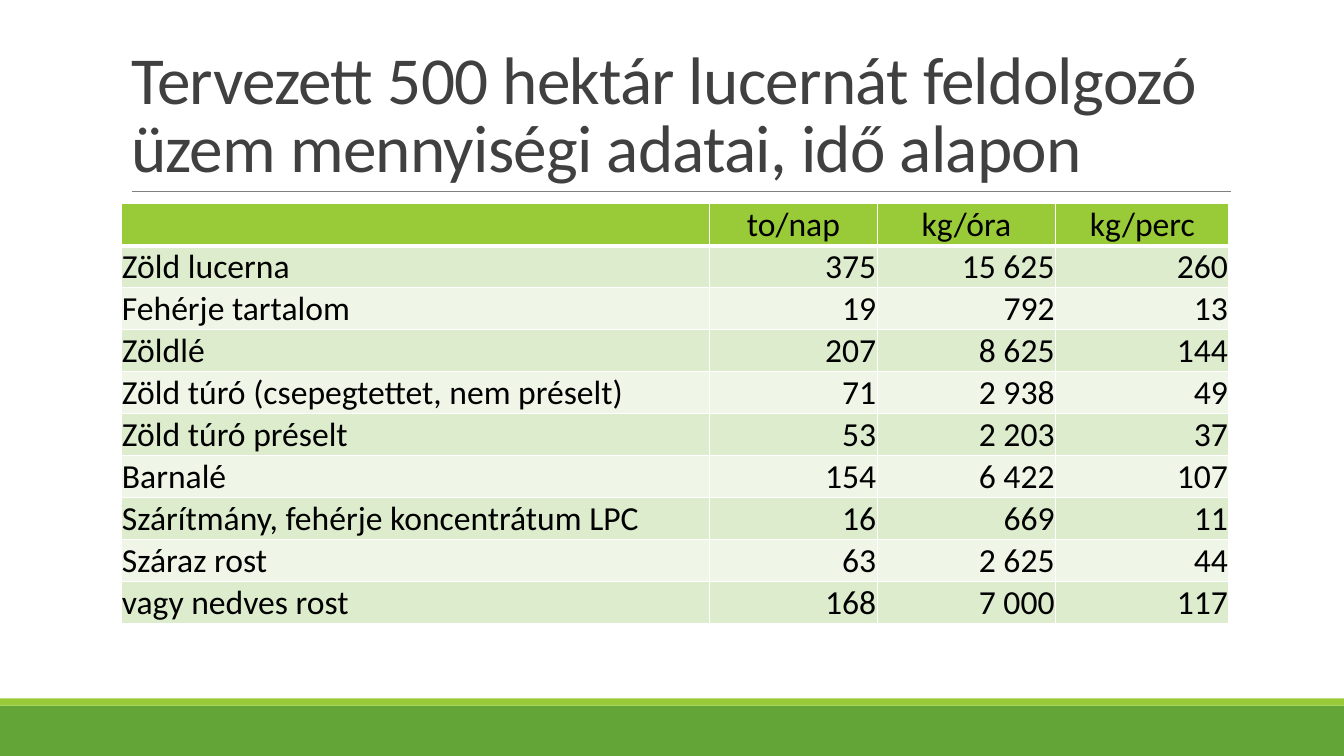
from lxml import etree
from pptx import Presentation
from pptx.dml.color import RGBColor
from pptx.enum.shapes import MSO_CONNECTOR, MSO_SHAPE
from pptx.enum.text import MSO_ANCHOR, MSO_AUTO_SIZE, PP_ALIGN
from pptx.oxml.ns import qn
from pptx.util import Inches, Pt

LEFT, CENTER, RIGHT = PP_ALIGN.LEFT, PP_ALIGN.CENTER, PP_ALIGN.RIGHT
BOTTOM = MSO_ANCHOR.BOTTOM

# Content
TITLE = "Tervezett 500 hektár lucernát feldolgozó üzem mennyiségi adatai, idő alapon"
ROWS = [
    ("", "to/nap", "kg/óra", "kg/perc"),
    ("Zöld lucerna", "375", "15 625", "260"),
    ("Fehérje tartalom", "19", "792", "13"),
    ("Zöldlé", "207", "8 625", "144"),
    ("Zöld túró (csepegtettet, nem préselt)", "71", "2 938", "49"),
    ("Zöld túró préselt", "53", "2 203", "37"),
    ("Barnalé", "154", "6 422", "107"),
    ("Szárítmány, fehérje koncentrátum LPC", "16", "669", "11"),
    ("Száraz rost", "63", "2 625", "44"),
    ("vagy nedves rost", "168", "7 000", "117"),
]

THEME = {
    "font": "Calibri", "title_size": 48, "table_size": 24,
    "title": "404040", "text": "000000", "rule": "808080", "border": "FFFFFF",
    "band": "63A537", "accent": "99CB38", "odd_row": "DEECCE", "even_row": "EFF6E8",
}

# Layout in inches
SLIDE_W, SLIDE_H = 13.33, 7.5
TITLE_BOX = (1.2, 0.31, 11, 1.59)
RULE_X1, RULE_X2, RULE_Y = 1.31, 12.21, 1.9
TABLE_X, TABLE_Y, ROW_H = 1.2, 2.02, 0.41
COLUMN_WIDTHS = (5.84, 1.66, 1.77, 1.72)
BANDS = [(7, 0.5, "band"), (6.93, 0.07, "accent")]


def color(key):
    return RGBColor.from_string(THEME[key])


def write(frame, text, size, ink, align=LEFT, line_spacing=None, tracking=None):
    paragraph = frame.paragraphs[0]
    paragraph.alignment = align
    paragraph.line_spacing = line_spacing
    run = paragraph.add_run()
    run.text = text
    run.font.name = THEME["font"]
    run.font.size = Pt(THEME[size])
    run.font.color.rgb = color(ink)
    if tracking is not None:
        run.font._element.set("spc", str(int(tracking * 100)))


def set_borders(cell, top=1, bottom=1):
    properties = cell._tc.get_or_add_tcPr()
    sides = (("lnL", 1), ("lnR", 1), ("lnT", top), ("lnB", bottom))
    for position, (side, width) in enumerate(sides):
        line = etree.Element(qn(f"a:{side}"), w=str(Pt(width)))
        fill = etree.SubElement(line, qn("a:solidFill"))
        etree.SubElement(fill, qn("a:srgbClr"), val=THEME["border"])
        properties.insert(position, line)


def add_decoration(slide):
    for top, height, fill in BANDS:
        band = slide.shapes.add_shape(
            MSO_SHAPE.RECTANGLE, 0, Inches(top), Inches(SLIDE_W), Inches(height))
        band.shadow.inherit = False
        band.fill.solid()
        band.fill.fore_color.rgb = color(fill)
        band.line.fill.background()
    rule = slide.shapes.add_connector(
        MSO_CONNECTOR.STRAIGHT, Inches(RULE_X1), Inches(RULE_Y), Inches(RULE_X2), Inches(RULE_Y))
    rule.line.color.rgb = color("rule")
    rule.line.width = Pt(0.5)
    etree.SubElement(rule._element.spPr, qn("a:effectLst"))


def add_title(slide):
    title = slide.shapes.title
    title.left, title.top, title.width, title.height = map(Inches, TITLE_BOX)
    frame = title.text_frame
    frame.word_wrap = True
    frame.auto_size = MSO_AUTO_SIZE.NONE
    frame.vertical_anchor = BOTTOM
    write(frame, TITLE, "title_size", "title", line_spacing=0.85, tracking=-0.5)


def add_quantities(slide):
    table = slide.shapes.add_table(
        len(ROWS), len(COLUMN_WIDTHS), Inches(TABLE_X), Inches(TABLE_Y),
        Inches(sum(COLUMN_WIDTHS)), Inches(ROW_H * len(ROWS))).table
    for column, width in zip(table.columns, COLUMN_WIDTHS):
        column.width = Inches(width)
    for r, values in enumerate(ROWS):
        table.rows[r].height = Inches(ROW_H)
        row_fill = "accent" if r == 0 else "odd_row" if r % 2 else "even_row"
        for c, value in enumerate(values):
            cell = table.cell(r, c)
            cell.margin_left = cell.margin_right = cell.margin_top = Inches(0.01)
            cell.margin_bottom = 0
            cell.vertical_anchor = BOTTOM
            cell.fill.solid()
            cell.fill.fore_color.rgb = color(row_fill)
            # The header is set off by a thicker line
            set_borders(cell, top=3 if r == 1 else 1, bottom=3 if r == 0 else 1)
            if value:
                align = CENTER if r == 0 else RIGHT if c else LEFT
                write(cell.text_frame, value, "table_size", "text", align)
                cell.text_frame.paragraphs[0].runs[0].font.bold = False


def main():
    deck = Presentation()
    deck.slide_width, deck.slide_height = Inches(SLIDE_W), Inches(SLIDE_H)
    slide = deck.slides.add_slide(deck.slide_layouts[5])
    add_decoration(slide)
    add_title(slide)
    add_quantities(slide)
    deck.save("out.pptx")


if __name__ == "__main__":
    main()
